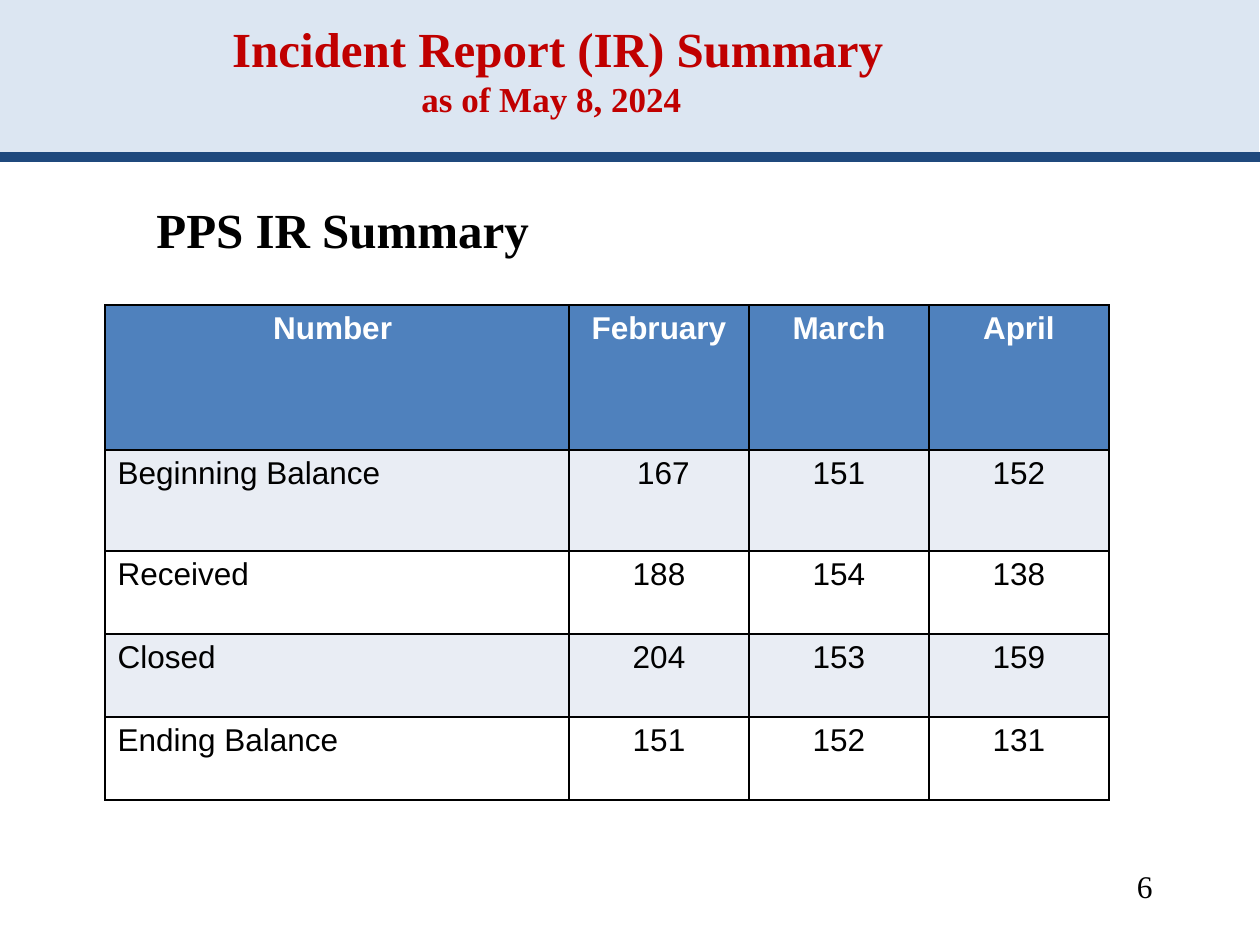
from lxml.etree import SubElement
from pptx import Presentation
from pptx.dml.color import RGBColor
from pptx.enum.shapes import MSO_CONNECTOR, MSO_SHAPE
from pptx.enum.text import MSO_ANCHOR, MSO_AUTO_SIZE, PP_ALIGN
from pptx.oxml.ns import qn
from pptx.util import Emu, Pt

PX_PER_INCH = 126
SERIF, SANS = "Times New Roman", "Arial"
BLACK, WHITE, RED = "000000", "FFFFFF", "C00000"
HEADER_BLUE, BAND_BLUE, RULE_BLUE, ROW_TINT = "4F81BD", "DCE6F2", "1F497D", "E9EDF4"

COLUMN_WIDTHS = (464, 180, 180, 180)
ROW_HEIGHTS = (145, 101, 83, 83, 83)
INCIDENTS = (
    ("Number ", "February", "March", "April"),
    ("Beginning Balance", " 167", "151", "152"),
    ("Received", "188", "154", "138"),
    ("Closed", "204", "153", "159"),
    ("Ending Balance", "151", "152", "131"),
)


def px(length):
    return Emu(round(length * 914400 / PX_PER_INCH))


def color(value):
    return RGBColor.from_string(value)


def set_font(font, name, size, value, bold=False):
    font.name, font.size, font.bold = name, Pt(size), bold
    font.color.rgb = color(value)


def add_header(slide, left, top, width, height):
    # Pale band, placed behind the title
    band = slide.shapes.add_shape(
        MSO_SHAPE.RECTANGLE, px(left - 1), px(top - 5), px(width), px(height + 4))
    band.shadow.inherit = False
    band.fill.solid()
    band.fill.fore_color.rgb = color(BAND_BLUE)
    band.line.fill.background()

    # Rule under the band
    rule_y = px(top + height)
    rule = slide.shapes.add_connector(
        MSO_CONNECTOR.STRAIGHT, px(left), rule_y, px(left + width), rule_y)
    rule.line.color.rgb = color(RULE_BLUE)
    rule.line.width = Pt(5.5)
    SubElement(rule.element.spPr, qn("a:effectLst"))

    # Title with its date line
    title = slide.shapes.title
    slide.shapes.element.append(title.element)
    title.left, title.top = px(left + 21), px(top + 21)
    title.width, title.height = px(1061), px(105)
    frame = title.text_frame
    frame.auto_size = MSO_AUTO_SIZE.NONE
    frame.vertical_anchor = MSO_ANCHOR.BOTTOM
    paragraph = frame.paragraphs[0]
    paragraph.alignment = PP_ALIGN.CENTER
    heading = paragraph.add_run()
    heading.text = " Incident Report (IR) Summary"
    set_font(heading.font, SERIF, 28, RED, True)
    paragraph.add_line_break()
    date = paragraph.add_run()
    date.text = "as of May 8, 2024"
    set_font(date.font, SERIF, 20, RED, True)


def add_text(slide, left, top, width, height, text, size, bold=False,
             alignment=PP_ALIGN.LEFT):
    frame = slide.shapes.add_textbox(
        px(left), px(top), px(width), px(height)).text_frame
    frame.word_wrap = True
    paragraph = frame.paragraphs[0]
    paragraph.text = text
    paragraph.alignment = alignment
    set_font(paragraph.font, SERIF, size, BLACK, bold)


def add_borders(cell):
    properties = cell._tc.get_or_add_tcPr()
    for index, side in enumerate(("lnL", "lnR", "lnT", "lnB")):
        line = properties.makeelement(qn(f"a:{side}"), {"w": str(Pt(1))})
        fill = SubElement(line, qn("a:solidFill"))
        SubElement(fill, qn("a:srgbClr"), val=BLACK)
        properties.insert(index, line)


def add_incident_table(slide, left, top):
    table = slide.shapes.add_table(
        len(ROW_HEIGHTS), len(COLUMN_WIDTHS), px(left), px(top),
        px(sum(COLUMN_WIDTHS)), px(sum(ROW_HEIGHTS))).table
    for column, width in zip(table.columns, COLUMN_WIDTHS):
        column.width = px(width)
    for row, height in zip(table.rows, ROW_HEIGHTS):
        row.height = px(height)

    for row_index, values in enumerate(INCIDENTS):
        is_header = row_index == 0
        row_fill = HEADER_BLUE if is_header else (WHITE, ROW_TINT)[row_index % 2]
        for column_index, value in enumerate(values):
            cell = table.cell(row_index, column_index)
            cell.fill.solid()
            cell.fill.fore_color.rgb = color(row_fill)
            add_borders(cell)
            paragraph = cell.text_frame.paragraphs[0]
            paragraph.text = value
            is_label = column_index == 0 and not is_header
            paragraph.alignment = PP_ALIGN.LEFT if is_label else PP_ALIGN.CENTER
            set_font(paragraph.font, SANS, 18, WHITE if is_header else BLACK, is_header)


def main():
    presentation = Presentation()
    presentation.slide_width, presentation.slide_height = px(1260), px(945)
    slide = presentation.slides.add_slide(presentation.slide_layouts[5])

    add_header(slide, 0, 0, 1260, 157)
    add_text(slide, 144, 193, 966, 72, "PPS IR Summary", 28, bold=True)
    add_incident_table(slide, 105, 305)
    # Page number
    add_text(slide, 903, 861, 262, 63, "6", 18, alignment=PP_ALIGN.RIGHT)

    presentation.save("out.pptx")


if __name__ == "__main__":
    main()
